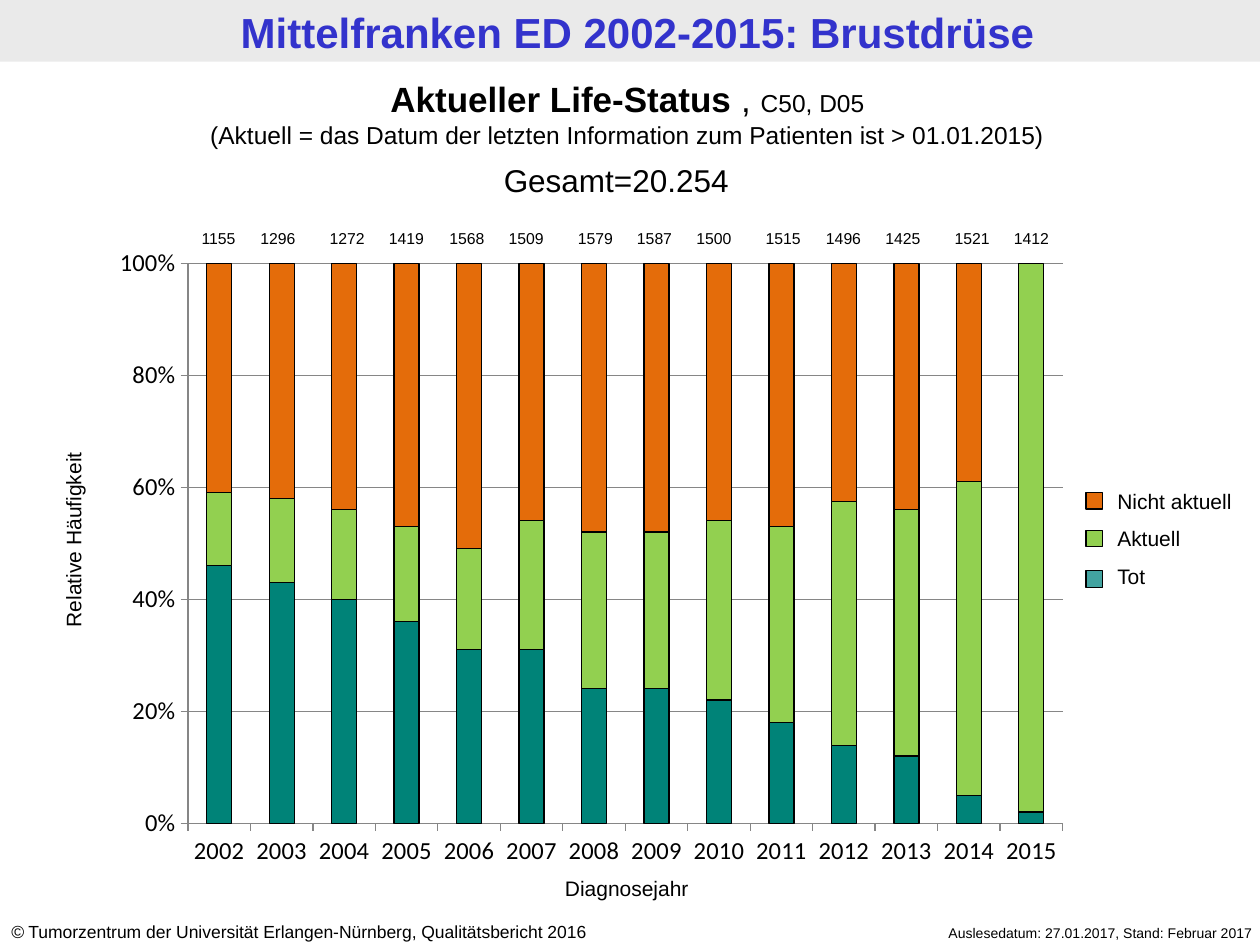
from dataclasses import dataclass

from lxml.etree import SubElement as Sub
from pptx import Presentation
from pptx.chart.data import CategoryChartData as ChartData
from pptx.dml.color import RGBColor
from pptx.enum.chart import XL_CHART_TYPE as Kind, XL_TICK_MARK as Tick
from pptx.enum.shapes import MSO_SHAPE as Form
from pptx.enum.text import MSO_ANCHOR as Anchor, PP_ALIGN as Align
from pptx.oxml import parse_xml
from pptx.oxml.ns import nsdecls, qn
from pptx.util import Pt

BLACK = RGBColor(0x00, 0x00, 0x00)
BAND = RGBColor(0xEA, 0xEA, 0xEA)
BLUE = RGBColor(0x33, 0x33, 0xCC)
TEAL = RGBColor(0x00, 0x83, 0x78)
PALE = RGBColor(0x00, 0x83, 0x80)
GREEN = RGBColor(0x92, 0xD0, 0x50)
ORANGE = RGBColor(0xE4, 0x6C, 0x0A)
GRAY = RGBColor(0x86, 0x86, 0x86)


@dataclass
class Run:
    text: str
    size: float
    bold: bool = False
    italic: bool = False
    color: RGBColor = BLACK


@dataclass
class Box:
    left: float
    top: float
    width: float
    height: float
    lines: list[list[Run]]
    align: Align = Align.CENTER
    anchor: Anchor = Anchor.TOP
    gap: float = 0
    turn: float = 0


@dataclass
class Key:
    top: float
    color: RGBColor
    alpha: int = 100


@dataclass
class Part:
    name: str
    color: RGBColor
    vals: list[int]


@dataclass
class Total:
    count: int
    left: float


PARTS = [
    Part("Tot", TEAL, [46, 43, 40, 36, 31, 31, 24, 24, 22, 18, 14, 12, 5, 2]),
    Part("Aktuell", GREEN, [13, 15, 16, 17, 18, 23, 28, 28, 32, 35, 44, 44, 56, 98]),
    Part("Nicht aktuell", ORANGE, [41, 42, 44, 47, 51, 46, 48, 48, 46, 47, 43, 44, 39, 0]),
]
KEYS = [Key(281.5, ORANGE), Key(303.1, GREEN), Key(326.2, PALE, 74)]
TOTALS = [
    Total(1155, 105.1), Total(1296, 139), Total(1272, 178.6), Total(1419, 212.4),
    Total(1568, 247), Total(1509, 280.8), Total(1579, 320.4), Total(1587, 354.2),
    Total(1500, 388.1), Total(1515, 427.7), Total(1496, 462.2), Total(1425, 496.1),
    Total(1521, 535.7), Total(1412, 569.5),
]
BOXES = [
    # Header and footer
    Box(4.3, 0.7, 720, 35.3,
        [[Run("Mittelfranken ED 2002-2015: Brustdrüse", 24, bold=True, color=BLUE)]],
        anchor=Anchor.MIDDLE),
    Box(-0.7, 522.7, 377.3, 19.4,
        [[Run("©", 10, italic=True),
          Run(" Tumorzentrum der Universität Erlangen-Nürnberg, Qualitätsbericht 2016", 10)]],
        Align.LEFT),
    Box(478.8, 524.9, 244.1, 17.3,
        [[Run("Auslesedatum: 27.01.2017, Stand: Februar 2017", 8)]], Align.RIGHT),
    # Chart heading
    Box(-2.9, 41, 722.9, 48.2,
        [[Run("Aktueller Life-Status ", 20, bold=True), Run(", ", 20), Run("C50, D05", 14)],
         [Run("(Aktuell = das Datum der letzten Information zum Patienten ist > 01.01.2015)", 14)]]),
    Box(280.8, 88.6, 158.4, 28.8, [[Run("Gesamt=20.254", 18)]], Align.LEFT),
    # Axis titles
    Box(-44.6, 297.4, 173.5, 22.3, [[Run("Relative Häufigkeit", 12)]], turn=270),
    Box(277.2, 496.8, 162, 22.3, [[Run("Diagnosejahr", 12)]]),
    # Legend text
    Box(631.4, 275.8, 170.6, 65.5, [[Run(part.name, 12)] for part in reversed(PARTS)],
        Align.LEFT, gap=6.8),
]


def add_box(slide, box: Box) -> None:
    shape = slide.shapes.add_textbox(Pt(box.left), Pt(box.top), Pt(box.width), Pt(box.height))
    shape.rotation = box.turn
    frame = shape.text_frame
    frame.word_wrap = True
    frame.vertical_anchor = box.anchor
    for i, line in enumerate(box.lines):
        para = frame.add_paragraph() if i else frame.paragraphs[0]
        para.alignment = box.align
        if i:
            para.space_before = Pt(box.gap)
        for item in line:
            run = para.add_run()
            run.text = item.text
            font = run.font
            font.name, font.size = "Arial", Pt(item.size)
            font.bold, font.italic = item.bold, item.italic
            font.color.rgb = item.color


def add_rect(slide, left: float, top: float, width: float, height: float, color: RGBColor):
    rect = slide.shapes.add_shape(Form.RECTANGLE, Pt(left), Pt(top), Pt(width), Pt(height))
    rect.shadow.inherit = False
    rect.fill.solid()
    rect.fill.fore_color.rgb = color
    rect.line.fill.background()
    return rect


def add_key(slide, key: Key) -> None:
    rect = add_rect(slide, 620.6, key.top, 9.4, 9.4, key.color)
    rect.line.color.rgb = BLACK
    rect.line.width = Pt(0.75)
    if key.alpha < 100:
        tone = rect.fill._xPr.find(qn("a:solidFill"))[0]
        Sub(tone, qn("a:alpha")).set("val", str(key.alpha * 1000))


def add_bars(slide) -> None:
    data = ChartData(number_format="0")
    data.categories = [str(year) for year in range(2002, 2016)]
    for part in PARTS:
        data.add_series(part.name, part.vals)
    chart = slide.shapes.add_chart(Kind.COLUMN_STACKED_100, Pt(56.9), Pt(134.6),
                                   Pt(561.6), Pt(367.9), data).chart
    chart.has_legend = chart.has_title = False
    chart.font.name, chart.font.size = "Calibri", Pt(18)
    chart.font.color.rgb = BLACK

    plot = chart.plots[0]
    plot.gap_width, plot.overlap = 150, 100
    plot.vary_by_categories = False
    for bar, part in zip(plot.series, PARTS):
        bar.format.fill.solid()
        bar.format.fill.fore_color.rgb = part.color
        bar.format.line.color.rgb = BLACK
        bar.format.line.width = Pt(0.75)

    for axis in (chart.category_axis, chart.value_axis):
        axis.major_tick_mark, axis.minor_tick_mark = Tick.OUTSIDE, Tick.NONE
        axis.tick_labels.font.size = Pt(14)
        axis.format.line.color.rgb = GRAY
    axis = chart.value_axis
    axis.major_unit = 0.2
    axis.tick_labels.number_format = "0%"
    axis.tick_labels.number_format_is_linked = False
    axis.major_gridlines.format.line.color.rgb = GRAY

    # Fixed inner plot area, as shares of the chart
    area = chart._chartSpace.chart.plotArea
    for old in area.findall(qn("c:layout")):
        area.remove(old)
    sides = "".join(f'<c:{tag} val="{val}"/>' for tag, val in [
        ("layoutTarget", "inner"), ("xMode", "edge"), ("yMode", "edge"),
        ("x", 0.09), ("y", 0.043), ("w", 0.89), ("h", 0.87)])
    area.insert(0, parse_xml(
        f'<c:layout {nsdecls("c")}><c:manualLayout>{sides}</c:manualLayout></c:layout>'))


def main() -> None:
    deck = Presentation()
    deck.slide_width, deck.slide_height = Pt(720), Pt(540)
    slide = deck.slides.add_slide(deck.slide_layouts[6])

    add_rect(slide, 0, 0, 720, 35.3, BAND)
    add_bars(slide)
    for key in KEYS:
        add_key(slide, key)
    for box in BOXES:
        add_box(slide, box)
    # Case counts above the bars
    for total in TOTALS:
        add_box(slide, Box(total.left, 126.9, 39.6, 18, [[Run(str(total.count), 9)]]))

    deck.save("out.pptx")


if __name__ == "__main__":
    main()
